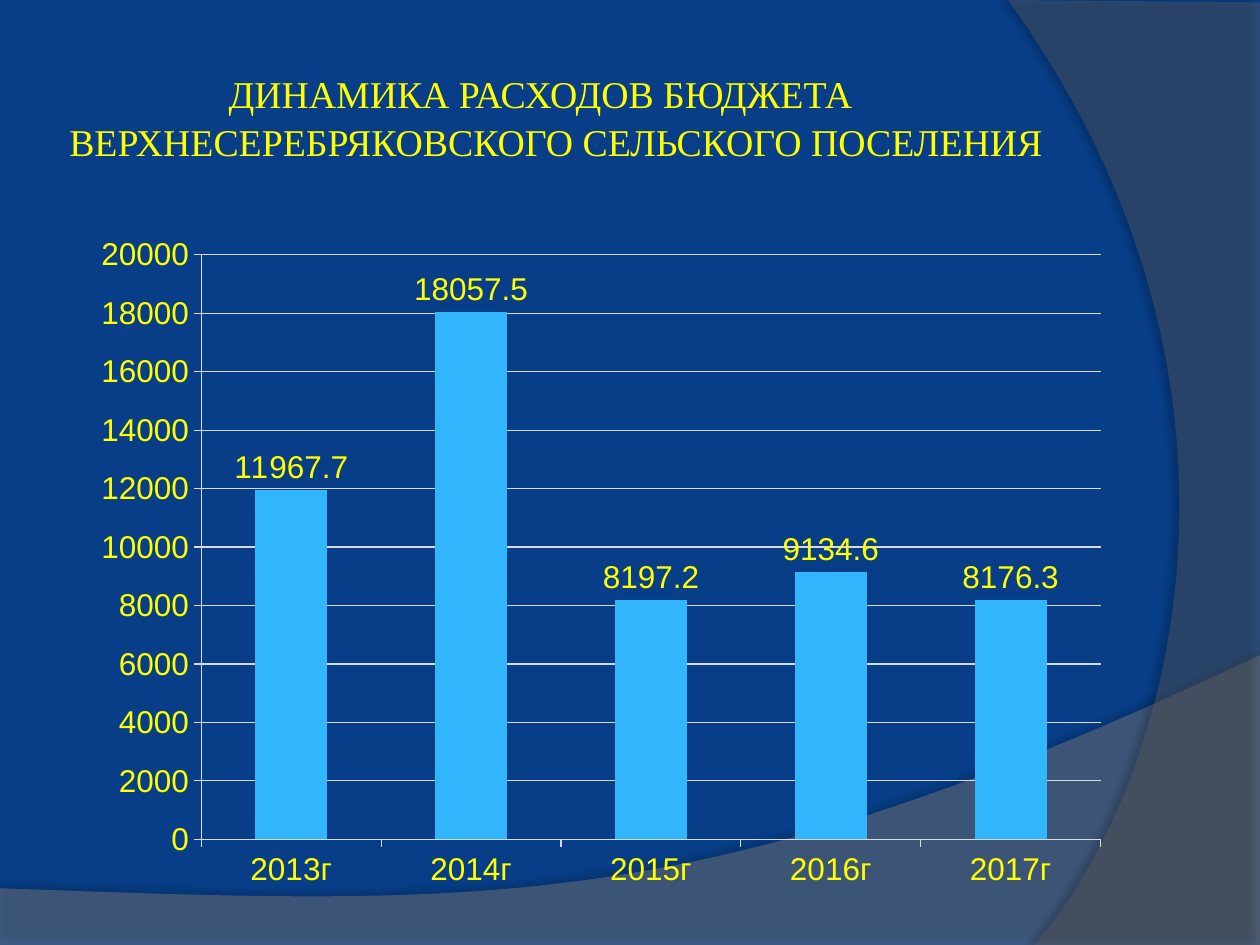
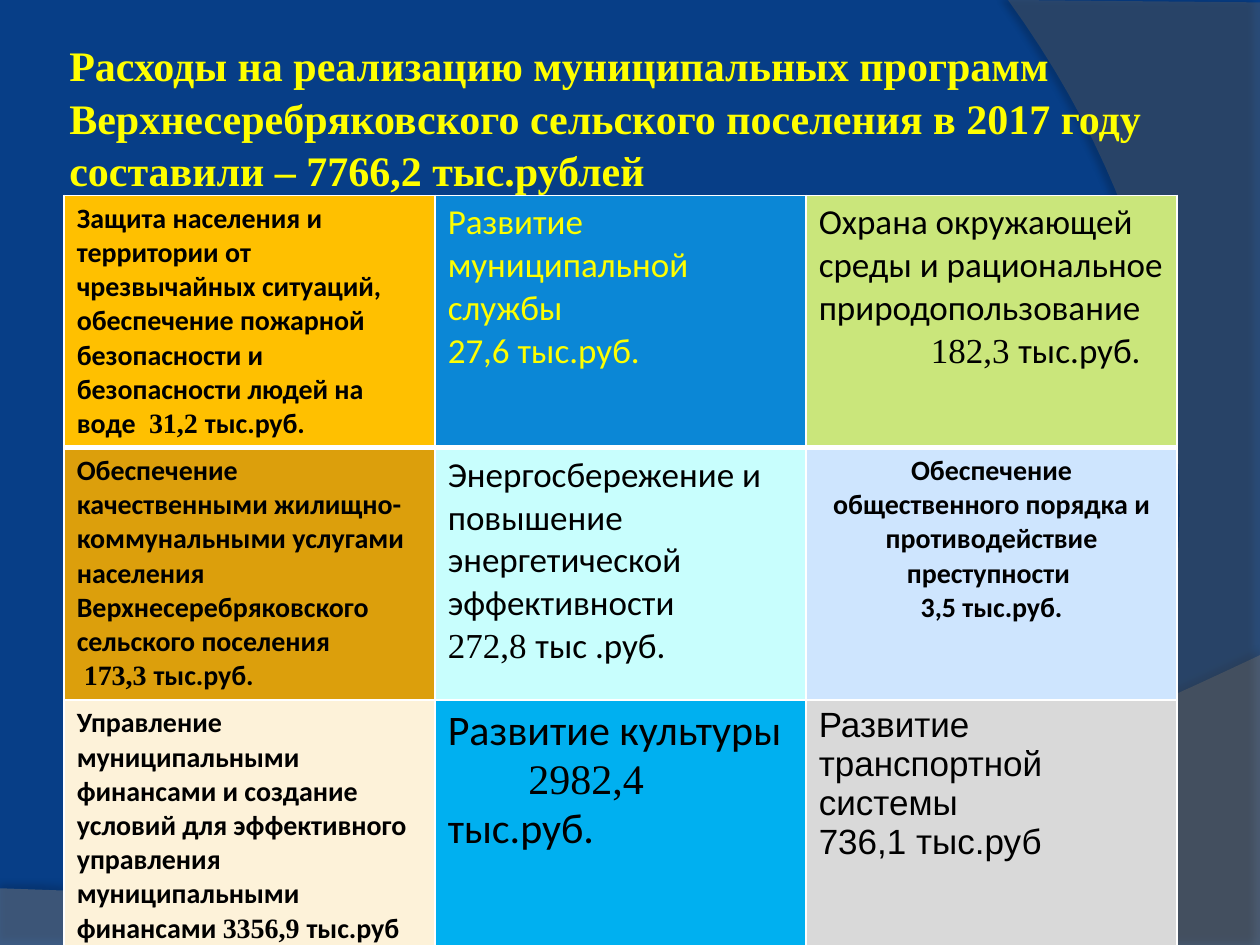
"""Build two slides on the spending of a rural settlement's budget."""
from lxml import etree
from pptx import Presentation
from pptx import util as u
from pptx.chart import data
from pptx.dml.color import RGBColor
from pptx.enum import chart as charts, text
from pptx.oxml import ns

Pt = u.Pt
NAVY = RGBColor(0x07, 0x3E, 0x87)
YELLOW = RGBColor(0xFF, 0xFF, 0x00)
BLACK = RGBColor(0x00, 0x00, 0x00)
WHITE = RGBColor(0xFF, 0xFF, 0xFF)
GRID = RGBColor(0xD9, 0xD9, 0xD9)
BAR = RGBColor(0x31, 0xB6, 0xFD)
WAVE = RGBColor(0x7F, 0x7F, 0x7F)
ARC = RGBColor(0x5E, 0x5E, 0x5E)
AMBER = RGBColor(0xFF, 0xC0, 0x00)
BLUE = RGBColor(0x0B, 0x87, 0xD6)
LIME = RGBColor(0xCA, 0xE6, 0x7B)
OCHRE = RGBColor(0xDC, 0x9F, 0x0C)
AQUA = RGBColor(0xC8, 0xFE, 0xFD)
PALE_BLUE = RGBColor(0xCE, 0xE5, 0xFE)
CREAM = RGBColor(0xFD, 0xF2, 0xD9)
SKY = RGBColor(0x00, 0xB0, 0xF0)
GRAY = RGBColor(0xD9, 0xD9, 0xD9)

SERIF, SANS, CELL_FONT = "Times New Roman", "Arial", "Calibri"
TITLE_ONLY = 5

SPENDING = {"2013г": 11967.7, "2014г": 18057.5, "2015г": 8197.2,
            "2016г": 9134.6, "2017г": 8176.3}

# Each programme: fill, size, options, lines; the part between bars is serif.
PROGRAMMES = [
    [(AMBER, 16, {}, ["Защита населения и территории от чрезвычайных ситуаций, "
                      "обеспечение пожарной безопасности и безопасности людей на воде "
                      "| 31,2 |тыс.руб."]),
     (BLUE, 20, {"color": YELLOW}, ["Развитие муниципальной службы", "27,6 тыс.руб."]),
     (LIME, 20, {"indent": 64}, ["Охрана окружающей среды и рациональное "
                                 "природопользование", "|182,3 |тыс.руб."])],
    [(OCHRE, 16, {}, ["Обеспечение качественными жилищно- коммунальными услугами "
                      "населения Верхнесеребряковского сельского поселения",
                      "| 173,3 |тыс.руб."]),
     (AQUA, 20, {}, ["Энергосбережение и повышение энергетической эффективности",
                     "|272,8 |тыс .руб."]),
     (PALE_BLUE, 16, {"align": text.PP_ALIGN.CENTER},
      ["Обеспечение общественного порядка и противодействие", "преступности ",
       "3,5 тыс.руб."])],
    [(CREAM, 16, {}, ["Управление муниципальными финансами и создание условий для "
                      "эффективного управления муниципальными финансами "
                      "|3356,9 |тыс.руб"]),
     (SKY, 24, {"indent": 46}, ["Развитие культуры", "|2982,4 |тыс.руб."]),
     (GRAY, 20, {"font": SANS}, ["Развитие транспортной системы", "736,1 тыс.руб"])],
]


def add_xml(parent, tag, **attributes):
    """Append a child element such as a:ln and return it."""
    return etree.SubElement(parent, ns.qn(tag), attributes)


def format_font(font, name, size, color, bold=False):
    """Set the face, size, colour and weight of a font."""
    font.name, font.size, font.bold = name, Pt(size), bold
    font.color.rgb = color


def indent_first_line(para, points):
    """Indent the first line of a paragraph."""
    para._p.get_or_add_pPr().set("indent", str(Pt(points)))


def bezier(start, first, second, end, steps=48):
    """Return points along a cubic curve, without its start."""
    curve = []
    for step in range(1, steps + 1):
        t = step / steps
        weights = ((1 - t) ** 3, 3 * t * (1 - t) ** 2, 3 * t * t * (1 - t), t ** 3)
        curve.append(tuple(sum(w * p for w, p in zip(weights, axis))
                           for axis in zip(start, first, second, end)))
    return curve


def add_swoosh(page, points, color, opacity, shadow):
    """Draw a translucent outline with a shadow and return it."""
    corners = [(Pt(x), Pt(y)) for x, y in points]
    builder = page.shapes.build_freeform(*corners[0])
    builder.add_line_segments(corners[1:], close=True)
    shape = builder.convert_to_shape()
    shape.fill.solid()
    shape.fill.fore_color.rgb = color
    fill_color = shape.element.find(".//" + ns.qn("a:srgbClr"))
    add_xml(fill_color, "a:alpha", val=str(opacity * 1000))
    shape.line.fill.background()
    shape.shadow.inherit = False
    shade, distance, degrees = shadow
    effects = shape.element.find(".//" + ns.qn("a:effectLst"))
    outer = add_xml(effects, "a:outerShdw", blurRad=str(Pt(4)), dist=str(Pt(distance)),
                    dir=str(degrees * 60000), algn="ctr", rotWithShape="0")
    add_xml(add_xml(outer, "a:srgbClr", val=str(BLACK)), "a:alpha", val=str(shade * 1000))
    return shape


def decorate_layout(page):
    """Give the layout of the page its background and two swooshes."""
    layout = page.slide_layout
    layout.background.fill.solid()
    layout.background.fill.fore_color.rgb = NAVY
    for box in list(layout.placeholders)[1:]:
        layout.shapes.element.remove(box.element)
    wave = [(0, 507.6), (0, 540), (720, 540), (720, 374.4)]
    wave += bezier(wave[-1], (402.5, 524.9), (281.5, 517.7), wave[0])
    arc = [(720, 1.4), (720, 540), (591.1, 540)]
    arc += bezier(arc[-1], (673.2, 445.7), (733, 216), (576, 0))
    swooshes = [add_swoosh(page, wave, WAVE, 45, (35, 3.5, 270)),
                add_swoosh(page, arc, ARC, 40, (45, 4, 180))]
    for position, shape in enumerate(swooshes, start=2):
        layout.shapes.element.insert(position, shape.element)


def set_title(page, wording, width, size, bold=False, indent=0):
    """Place and format the title."""
    box = page.shapes.title
    box.left, box.top, box.width, box.height = Pt(36), Pt(21.6), Pt(width), Pt(90)
    frame = box.text_frame
    frame.text = wording
    frame.word_wrap = True
    frame.auto_size = text.MSO_AUTO_SIZE.NONE
    frame.vertical_anchor = text.MSO_ANCHOR.MIDDLE
    frame.margin_left = frame.margin_right = Pt(3.6)
    frame.margin_top = frame.margin_bottom = Pt(3.6)
    para = frame.paragraphs[0]
    para.alignment = text.PP_ALIGN.LEFT
    para.line_spacing = 1.04
    indent_first_line(para, indent)
    for span in para.runs:
        format_font(span.font, SERIF, size, YELLOW, bold)


def style_axis(axis):
    """Give an axis its ticks, line and label font."""
    axis.major_tick_mark = charts.XL_TICK_MARK.OUTSIDE
    axis.minor_tick_mark = charts.XL_TICK_MARK.NONE
    axis.format.line.color.rgb = GRID
    axis.format.line.width = Pt(0.75)
    format_font(axis.tick_labels.font, SANS, 18, YELLOW)


def place_plot(chart, **place):
    """Fix the inner plot area as fractions of the chart."""
    area = chart.element.find(".//" + ns.qn("c:plotArea"))
    for old in area.findall(ns.qn("c:layout")):
        area.remove(old)
    layout = etree.Element(ns.qn("c:layout"))
    manual = add_xml(layout, "c:manualLayout")
    add_xml(manual, "c:layoutTarget", val="inner")
    for side in "xy":
        add_xml(manual, f"c:{side}Mode", val="edge")
    for side, share in place.items():
        add_xml(manual, f"c:{side}", val=str(share))
    area.insert(0, layout)


def add_spending_chart(page):
    """Add the column chart of yearly spending."""
    table = data.CategoryChartData()
    table.categories = list(SPENDING)
    table.add_series("Series 1", list(SPENDING.values()))
    chart = page.shapes.add_chart(charts.XL_CHART_TYPE.COLUMN_CLUSTERED, Pt(36), Pt(126),
                                  Pt(658.8), Pt(393), table).chart
    chart.has_title = chart.has_legend = False
    format_font(chart.font, SANS, 18, WHITE)
    style_axis(chart.category_axis)
    values = chart.value_axis
    style_axis(values)
    values.minimum_scale, values.maximum_scale, values.major_unit = 0, 20000, 2000
    values.major_gridlines.format.line.color.rgb = GRID
    values.major_gridlines.format.line.width = Pt(0.75)
    plot = chart.plots[0]
    plot.gap_width, plot.vary_by_categories = 150, False
    fill = plot.series[0].format.fill
    fill.solid()
    fill.fore_color.rgb = BAR
    plot.has_data_labels = True
    labels = plot.data_labels
    labels.show_value = True
    labels.position = charts.XL_LABEL_POSITION.OUTSIDE_END
    format_font(labels.font, SANS, 18, YELLOW)
    place_plot(chart, x=0.12, y=0.05, w=0.78, h=0.85)


def set_borders(cell, **widths):
    """Draw white cell borders; keys are L, R, T and B."""
    properties = cell._tc.get_or_add_tcPr()
    for side, width in widths.items():
        line = add_xml(properties, f"a:ln{side}", w=str(Pt(width)))
        add_xml(add_xml(line, "a:solidFill"), "a:srgbClr", val=str(WHITE))


def fill_cell(cell, color, size, lines, options):
    """Write the lines of one programme into its cell."""
    cell.fill.solid()
    cell.fill.fore_color.rgb = color
    frame = cell.text_frame
    for number, line in enumerate(lines):
        para = frame.add_paragraph() if number else frame.paragraphs[0]
        para.alignment = options.get("align", text.PP_ALIGN.LEFT)
        if number:
            indent_first_line(para, options.get("indent", 0))
        for order, piece in enumerate(line.split("|")):
            if piece:
                span = para.add_run()
                span.text = piece
                face = SERIF if order % 2 else options.get("font", CELL_FONT)
                format_font(span.font, face, size, options.get("color", BLACK), size == 16)


def add_programme_table(page):
    """Add the grid of municipal programmes."""
    table = page.shapes.add_table(3, 3, Pt(36.7), Pt(111.6), Pt(636), Pt(375)).table
    table.first_row = table.horz_banding = False
    for r, row in enumerate(PROGRAMMES):
        for c, (color, size, options, lines) in enumerate(row):
            cell = table.cell(r, c)
            set_borders(cell, L=1, R=1, T=3 if r == 1 else 1, B=3 if r == 0 else 1)
            fill_cell(cell, color, size, lines, options)


def main():
    """Build and save the deck."""
    deck = Presentation()
    deck.slide_width, deck.slide_height = Pt(720), Pt(540)
    layout = deck.slide_layouts[TITLE_ONLY]

    page = deck.slides.add_slide(layout)
    decorate_layout(page)
    set_title(page, "ДИНАМИКА РАСХОДОВ БЮДЖЕТА ВЕРХНЕСЕРЕБРЯКОВСКОГО СЕЛЬСКОГО ПОСЕЛЕНИЯ",
              588, 21.6, indent=91)
    add_spending_chart(page)

    page = deck.slides.add_slide(layout)
    set_title(page, "Расходы на реализацию муниципальных программ Верхнесеребряковского "
              "сельского поселения в 2017 году \vсоставили – 7766,2 тыс.рублей",
              658.8, 24, bold=True)
    add_programme_table(page)
    deck.save("out.pptx")


if __name__ == "__main__":
    main()
